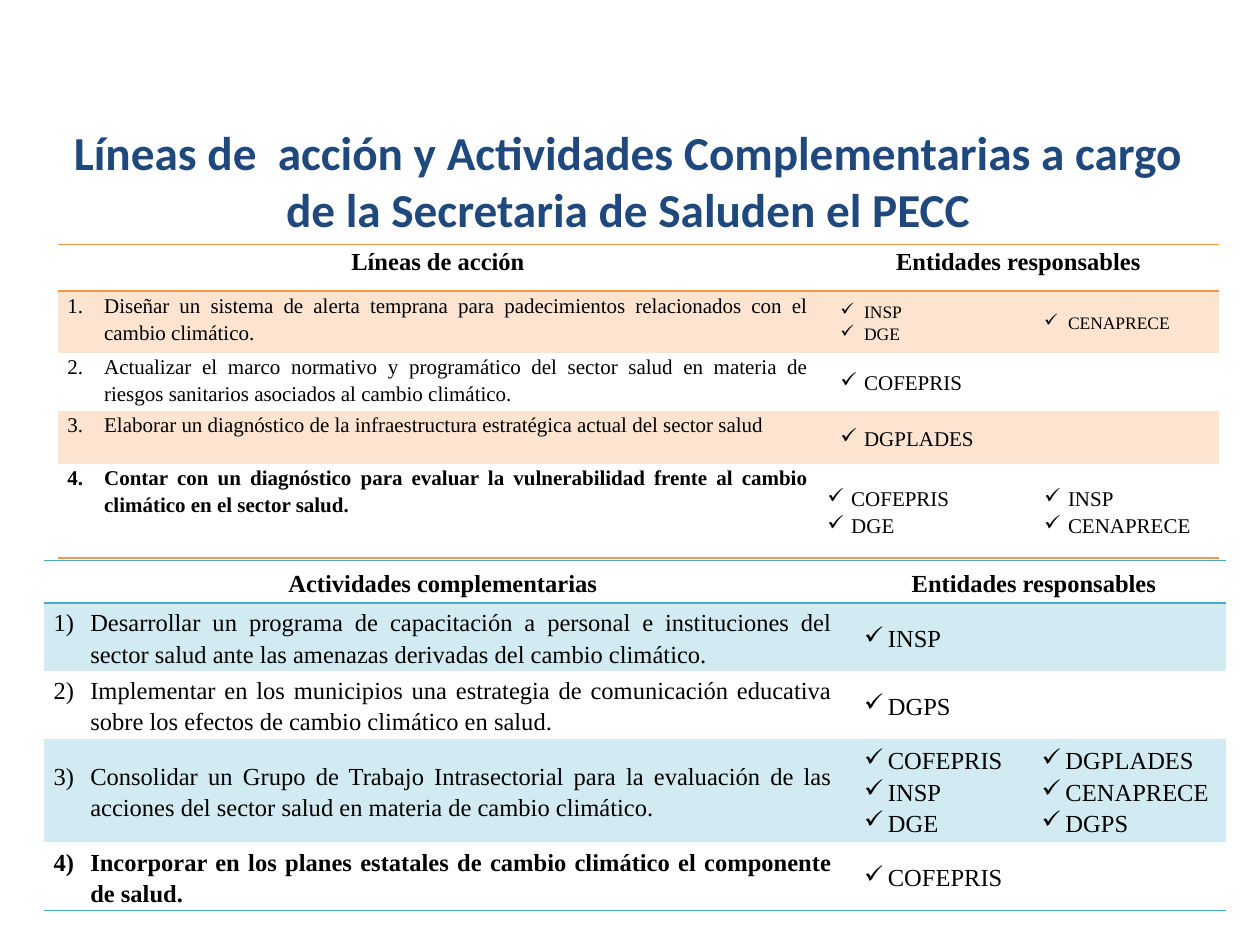
from dataclasses import dataclass

import pptx
import pptx.dml.color
import pptx.enum.text
import pptx.oxml.ns
import pptx.util
from lxml import etree

Cm, Pt = pptx.util.Cm, pptx.util.Pt
ALIGN = pptx.enum.text.PP_ALIGN
ANCHOR = pptx.enum.text.MSO_ANCHOR
BODY_FONT = "Times New Roman"
NUMBER_INDENT, CHECK_INDENT = 0.74, 0.48


@dataclass
class Line:
    text: str
    entities: tuple[tuple[str, ...], ...]
    indents: tuple[float, ...] = (0.74, 0.74)
    entity_size: int = 12
    bold: bool = False


@dataclass
class Plan:
    heading: str
    left: float
    top: float
    widths: tuple[float, ...]
    heights: tuple[float, ...]
    accent: str
    band: str
    numbering: str
    size: int
    anchor: ANCHOR
    lines: tuple[Line, ...]


PLANS = (
    Plan(
        "Líneas de acción", 1.17, 4.93, (15.32, 4.37, 3.71), (0.94, 1.24, 1.17, 1.07, 1.9),
        "F79646", "FDE4D0", "arabicPeriod", 12, ANCHOR.TOP,
        (
            Line("Diseñar un sistema de alerta temprana para padecimientos relacionados "
                 "con el cambio climático.",
                 (("INSP", "DGE"), ("CENAPRECE",)), (0.74, 0.48), entity_size=10),
            Line("Actualizar el marco normativo y programático del sector salud en materia "
                 "de riesgos sanitarios asociados al cambio climático.", (("COFEPRIS",),)),
            Line("Elaborar un diagnóstico de la infraestructura estratégica actual del "
                 "sector salud", (("DGPLADES",),)),
            Line("Contar con un diagnóstico para evaluar la vulnerabilidad frente al cambio "
                 "climático en el sector salud.",
                 (("COFEPRIS", "DGE"), ("INSP", "CENAPRECE")), (0.48, 0.48), bold=True),
        ),
    ),
    Plan(
        "Actividades complementarias", 0.89, 11.3, (16.08, 3.58, 4.17),
        (0.86, 1.37, 1.37, 2.08, 1.37),
        "4BACC6", "D2EAF1", "arabicParenR", 14, ANCHOR.MIDDLE,
        (
            Line("Desarrollar un programa de capacitación a personal e instituciones del "
                 "sector salud ante las amenazas derivadas del cambio climático.",
                 (("INSP",),), entity_size=14),
            Line("Implementar en los municipios una estrategia de comunicación educativa "
                 "sobre los efectos de cambio climático en salud.",
                 (("DGPS",),), entity_size=14),
            Line("Consolidar un Grupo de Trabajo Intrasectorial para la evaluación de las "
                 "acciones del sector salud en materia de cambio climático.",
                 (("COFEPRIS", "INSP", "DGE"), ("DGPLADES", "CENAPRECE", "DGPS")),
                 entity_size=14),
            Line("Incorporar en los planes estatales de cambio climático el componente de "
                 "salud.", (("COFEPRIS",),), entity_size=14, bold=True),
        ),
    ),
)


def color(value: str) -> pptx.dml.color.RGBColor:
    return pptx.dml.color.RGBColor.from_string(value)


def add_child(parent, tag: str, **attributes: str):
    return etree.SubElement(parent, pptx.oxml.ns.qn(tag), attributes)


def add_span(para, text: str, size: float, bold: bool = False,
             font: str = BODY_FONT, ink: str = "000000") -> None:
    span = para.add_run()
    span.text = text
    span.font.name, span.font.size, span.font.bold = font, Pt(size), bold
    span.font.color.rgb = color(ink)


def set_indent(para, left: float, hanging: float):
    properties = para._p.get_or_add_pPr()
    properties.set("marL", str(Cm(left)))
    properties.set("indent", str(-Cm(hanging)))
    return properties


def format_cell(cell, anchor: ANCHOR, fill: str | None, accent: str, edges: str) -> None:
    cell.margin_left = cell.margin_right = Cm(0.19)
    cell.margin_top = cell.margin_bottom = 0
    cell.vertical_anchor = anchor
    properties = cell._tc.get_or_add_tcPr()
    for side in "LRTB":
        border = add_child(properties, f"a:ln{side}", w=str(Pt(1)))
        if side in edges:
            add_child(add_child(border, "a:solidFill"), "a:srgbClr", val=accent)
        else:
            add_child(border, "a:noFill")
    if fill:
        cell.fill.solid()
        cell.fill.fore_color.rgb = color(fill)
    else:
        cell.fill.background()


def space_para(para, gap: float = 0) -> None:
    para.line_spacing = 1.15
    para.space_after = Pt(gap)
    para.space_before = Pt(gap)


def write_heading(cell, text: str) -> None:
    para = cell.text_frame.paragraphs[0]
    para.alignment = ALIGN.CENTER
    space_para(para, 3)
    add_span(para, text, 14, bold=True)


def write_action(cell, plan: Plan, line: Line, number: int) -> None:
    para = cell.text_frame.paragraphs[0]
    para.alignment = ALIGN.JUSTIFY
    space_para(para, 3)
    properties = set_indent(para, NUMBER_INDENT, NUMBER_INDENT)
    add_child(properties, "a:buFont", typeface="+mj-lt")
    add_child(properties, "a:buAutoNum", type=plan.numbering, startAt=str(number))
    add_span(para, line.text, plan.size, line.bold)


def write_entities(cell, names: tuple[str, ...], indent: float, size: int) -> None:
    frame = cell.text_frame
    for index, name in enumerate(names):
        para = frame.add_paragraph() if index else frame.paragraphs[0]
        space_para(para)
        add_child(set_indent(para, indent, CHECK_INDENT), "a:buChar", char="✓")
        add_span(para, name, size)


def add_plan(page, plan: Plan) -> None:
    table = page.shapes.add_table(
        len(plan.heights), len(plan.widths), Cm(plan.left), Cm(plan.top),
        Cm(sum(plan.widths)), Cm(sum(plan.heights))).table
    table.first_row = table.horz_banding = False
    for column, width in zip(table.columns, plan.widths):
        column.width = Cm(width)
    for row, height in zip(table.rows, plan.heights):
        row.height = Cm(height)

    # Heading row
    for cell in table.rows[0].cells:
        format_cell(cell, plan.anchor, None, plan.accent, "TB")
    table.cell(0, 1).merge(table.cell(0, 2))
    write_heading(table.cell(0, 0), plan.heading)
    write_heading(table.cell(0, 1), "Entidades responsables")

    # Numbered rows, every other one tinted
    for number, line in enumerate(plan.lines, 1):
        edges = {1: "T", len(plan.lines): "B"}.get(number, "")
        fill = plan.band if number % 2 else None
        for index, cell in enumerate(table.rows[number].cells):
            format_cell(cell, ANCHOR.MIDDLE if index else plan.anchor, fill,
                        plan.accent, edges)
        if len(line.entities) == 1:
            table.cell(number, 1).merge(table.cell(number, 2))
        write_action(table.cell(number, 0), plan, line, number)
        for column, (names, indent) in enumerate(zip(line.entities, line.indents), 1):
            write_entities(table.cell(number, column), names, indent, line.entity_size)


def add_title(page) -> None:
    box = page.shapes.add_textbox(Cm(0.66), Cm(2.34), Cm(24), Cm(2.59))
    frame = box.text_frame
    frame.word_wrap = True
    frame.vertical_anchor = ANCHOR.MIDDLE
    para = frame.paragraphs[0]
    para.alignment = ALIGN.CENTER
    add_span(para, "Líneas de  acción y Actividades Complementarias a cargo de la "
             "Secretaria de Saluden el PECC", 27, True, "Calibri", "1F497D")


def main() -> None:
    deck = pptx.Presentation()
    deck.slide_width, deck.slide_height = Cm(25.4), Cm(19.05)
    page = deck.slides.add_slide(deck.slide_layouts[6])
    for plan in PLANS:
        add_plan(page, plan)
    add_title(page)
    deck.save("out.pptx")


if __name__ == "__main__":
    main()
